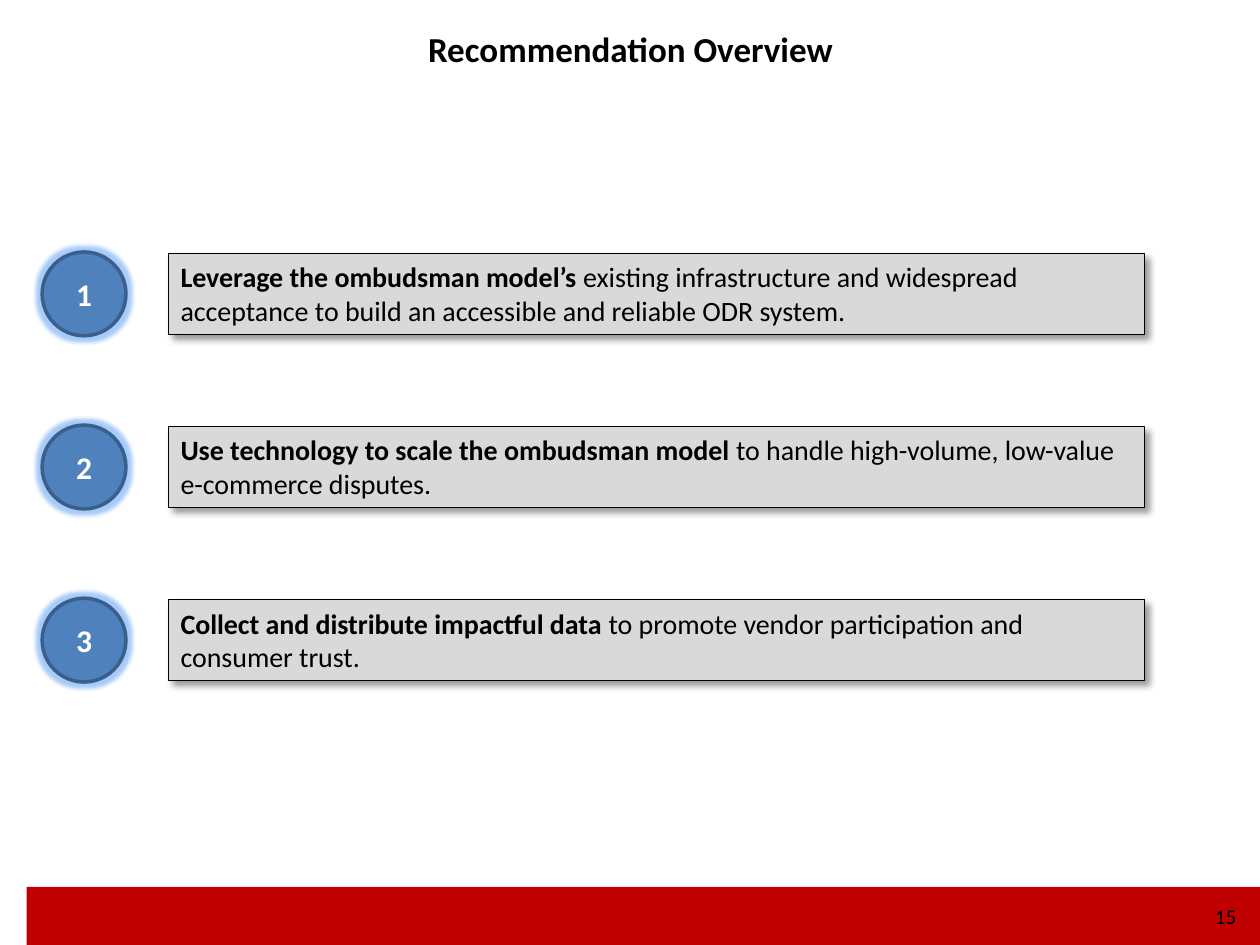
import lxml.etree
import pptx
import pptx.dml.color
import pptx.enum.shapes
import pptx.enum.text
import pptx.oxml.ns
import pptx.util

Cm = pptx.util.Cm
Pt = pptx.util.Pt
RGBColor = pptx.dml.color.RGBColor
Align = pptx.enum.text.PP_ALIGN
Anchor = pptx.enum.text.MSO_ANCHOR
Shape = pptx.enum.shapes.MSO_SHAPE
qn = pptx.oxml.ns.qn

BLACK = RGBColor(0x00, 0x00, 0x00)
WHITE = RGBColor(0xFF, 0xFF, 0xFF)
RED = RGBColor(0xC0, 0x00, 0x00)
GREY = RGBColor(0xD9, 0xD9, 0xD9)
BLUE = RGBColor(0x4F, 0x81, 0xBD)
DARK_BLUE = RGBColor(0x3A, 0x5F, 0x8C)
GLOW_BLUE = RGBColor(0x6B, 0xA9, 0xF5)

RECOMMENDATIONS = [
    ("Leverage the ombudsman model’s ",
     "existing infrastructure and widespread acceptance to build "
     "an accessible and reliable ODR system."),
    ("Use technology to scale the ombudsman model ",
     "to handle high-volume, low-value e-commerce disputes."),
    ("Collect and distribute impactful data ",
     "to promote vendor participation and consumer trust."),
]
FIRST_TOP = 5.08
ROW_STEP = 3.49


def add_text(paragraph, text, font="Calibri", size=16, color=BLACK, bold=False):
    run = paragraph.add_run()
    run.text = text
    run.font.name = font
    run.font.size = Pt(size)
    run.font.color.rgb = color
    run.font.bold = bold


def add_effect(shape, tag, color, alpha, **attributes):
    effects = shape.element.spPr.find(qn("a:effectLst"))
    effect = lxml.etree.SubElement(effects, qn(tag))
    for name, value in attributes.items():
        effect.set(name, str(value))
    fill = lxml.etree.SubElement(effect, qn("a:srgbClr"), val=str(color))
    lxml.etree.SubElement(fill, qn("a:alpha"), val=str(alpha * 1000))


class SlideBuilder:
    def __init__(self, slide, font="Calibri"):
        self.slide = slide
        self.font = font

    def prepare(self, shape, align, anchor):
        frame = shape.text_frame
        frame.word_wrap = True
        frame.vertical_anchor = anchor
        frame.margin_left = frame.margin_right = Cm(0.25)
        frame.margin_top = frame.margin_bottom = Cm(0.13)
        paragraph = frame.paragraphs[0]
        paragraph.alignment = align
        return paragraph

    def title(self, text, left, top, width, height):
        title = self.slide.shapes.title
        title.left, title.top = Cm(left), Cm(top)
        title.width, title.height = Cm(width), Cm(height)
        paragraph = self.prepare(title, Align.CENTER, Anchor.TOP)
        add_text(paragraph, text, font=self.font, size=20, bold=True)

    def shape(self, kind, left, top, width, height, fill, line=None, line_width=0):
        shape = self.slide.shapes.add_shape(
            kind, Cm(left), Cm(top), Cm(width), Cm(height))
        shape.shadow.inherit = False
        shape.fill.solid()
        shape.fill.fore_color.rgb = fill
        if line is None:
            shape.line.fill.background()
        else:
            shape.line.color.rgb = line
            shape.line.width = Pt(line_width)
        return shape

    def statement(self, lead, rest, top):
        box = self.shape(Shape.RECTANGLE, 3.39, top, 19.69, 1.63, GREY, BLACK, 0.5)
        add_effect(box, "a:outerShdw", BLACK, 40, blurRad=Pt(4), dist=Pt(3),
                   dir=45 * 60000, algn="tl", rotWithShape=0)
        paragraph = self.prepare(box, Align.LEFT, Anchor.TOP)
        add_text(paragraph, lead, font=self.font, bold=True)
        add_text(paragraph, rest, font=self.font)

    def badge(self, number, top):
        circle = self.shape(Shape.OVAL, 0.85, top, 1.69, 1.69, BLUE, DARK_BLUE, 2)
        add_effect(circle, "a:glow", GLOW_BLUE, 60, rad=Pt(5))
        paragraph = self.prepare(circle, Align.CENTER, Anchor.MIDDLE)
        add_text(paragraph, str(number), font=self.font, size=18, color=WHITE, bold=True)

    def page_number(self, number, left, top, width, height):
        box = self.slide.shapes.add_textbox(Cm(left), Cm(top), Cm(width), Cm(height))
        paragraph = self.prepare(box, Align.RIGHT, Anchor.MIDDLE)
        add_text(paragraph, str(number), font=self.font, size=12)


def main():
    presentation = pptx.Presentation()
    presentation.slide_width = Cm(25.4)
    presentation.slide_height = Cm(19.05)
    slide = presentation.slides.add_slide(presentation.slide_layouts[5])
    builder = SlideBuilder(slide)
    builder.shape(Shape.RECTANGLE, 0.54, 17.88, 24.86, 1.17, RED)
    builder.page_number(15, 23.7, 17.96, 1.47, 1.02)
    builder.title("Recommendation Overview", 1.7, 0.43, 22.02, 1.12)
    for index, (lead, rest) in enumerate(RECOMMENDATIONS):
        top = FIRST_TOP + index * ROW_STEP
        builder.statement(lead, rest, top + 0.03)
        builder.badge(index + 1, top)
    presentation.save("out.pptx")


if __name__ == "__main__":
    main()
